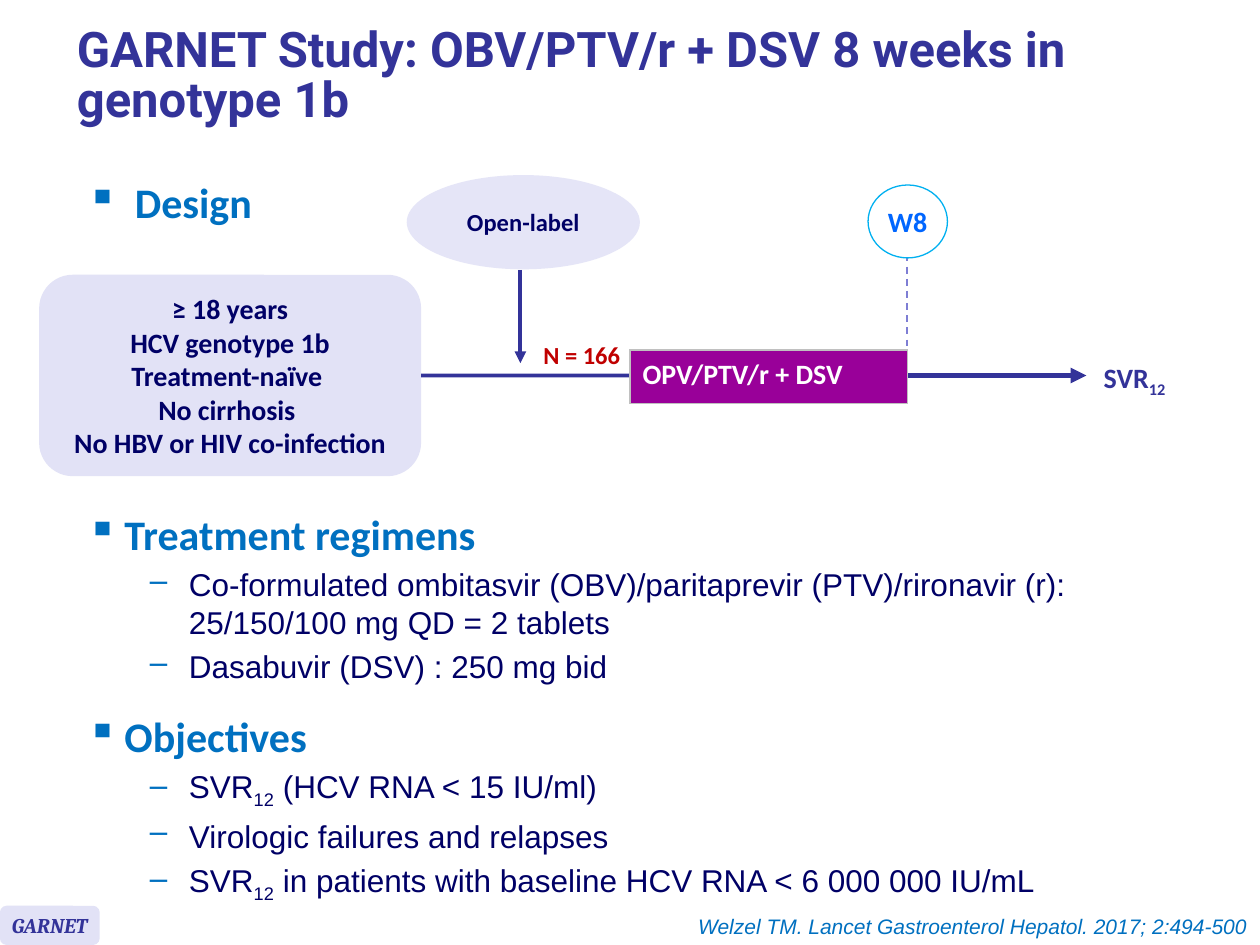
from lxml import etree
from pptx import Presentation
from pptx import util as u
from pptx.dml.color import RGBColor
from pptx.enum import dml, shapes, text
from pptx.oxml.ns import qn

HUES = {
    "indigo": "333399", "navy": "000066", "blue": "0070C0", "sky": "00B0F0",
    "azure": "0066FF", "red": "C00000", "purple": "990099", "mist": "E2E2F6",
    "pale": "E5E5F7", "violet": "7E7ED4", "grey": "C0C0C0", "white": "FFFFFF",
}
RGB = {name: RGBColor.from_string(code) for name, code in HUES.items()}
LEFT, CENTER, RIGHT = text.PP_ALIGN.LEFT, text.PP_ALIGN.CENTER, text.PP_ALIGN.RIGHT
MIDDLE = text.MSO_ANCHOR.MIDDLE


def write(para, words, size, hue, face="Calibri", bold=True, slant=False, align=LEFT):
    """Fill a paragraph; parts between underscores become subscripts."""
    para.alignment = align
    font = para.font
    font.size, font.name, font.bold, font.italic = u.Pt(size), face, bold, slant
    font.color.rgb = RGB[hue]
    for i, part in enumerate(words.split("_")):
        if part:
            run = para.add_run()
            run.text = part
            if i % 2:
                run.font._element.set("baseline", "-25000")


def link(x1, y1, x2, y2, hue, width, arrow=False):
    line = slide.shapes.add_connector(
        shapes.MSO_CONNECTOR.STRAIGHT, u.Cm(x1), u.Cm(y1), u.Cm(x2), u.Cm(y2))
    line.line.color.rgb = RGB[hue]
    line.line.width = u.Pt(width)
    if arrow:
        etree.SubElement(line.line._get_or_add_ln(), qn("a:tailEnd"), type="triangle")
    etree.SubElement(line._element.spPr, qn("a:effectLst"))
    return line


deck = Presentation()
deck.slide_width, deck.slide_height = u.Cm(25.4), u.Cm(19.05)
slide = deck.slides.add_slide(deck.slide_layouts[6])

# Study flow: lines behind the shapes
AXIS = 7.57
WEEK8 = 18.29
link(10.49, 5.44, 10.49, 7.32, "indigo", 2.25, arrow=True)
visit = link(WEEK8, 5.13, WEEK8, 8.13, "violet", 1)
visit.line.dash_style = dml.MSO_LINE.DASH

# Filled shapes: kind, place, fill, outline, lines, size, hue, face, slant
KIND = shapes.MSO_SHAPE
criteria = ["≥\u00a018 years", "HCV genotype 1b", "Treatment-naïve ",
            "No cirrhosis ", "No HBV or HIV co-infection"]
nodes = [
    (KIND.OVAL, (8.2, 3.53, 4.7, 1.9), "pale", None,
     ["Open-label"], 14, "navy", "Calibri", False),
    (KIND.OVAL, (17.5, 3.73, 1.6, 1.47), "white", "sky",
     ["W8"], 16, "azure", "Calibri", False),
    (KIND.ROUNDED_RECTANGLE, (0, 18.26, 2.01, 0.79), "mist", None,
     ["GARNET"], 12, "indigo", "Cambria", True),
    (KIND.ROUNDED_RECTANGLE, (0.79, 5.54, 7.7, 4.06), "mist", None,
     criteria, 16, "navy", "Calibri", False),
]
for kind, place, fill, edge, lines, size, hue, face, slant in nodes:
    node = slide.shapes.add_shape(kind, *map(u.Cm, place))
    node.shadow.inherit = False
    node.fill.solid()
    node.fill.fore_color.rgb = RGB[fill]
    if edge:
        node.line.color.rgb = RGB[edge]
        node.line.width = u.Pt(0.75)
    else:
        node.line.fill.background()
    frame = node.text_frame
    frame.word_wrap = len(lines) > 1
    frame.vertical_anchor = MIDDLE
    for i, words in enumerate(lines):
        para = frame.add_paragraph() if i else frame.paragraphs[0]
        write(para, words, size, hue, face, slant=slant, align=CENTER)

# The last node holds the entry criteria
entry = link(8.49, AXIS, 12.7, AXIS, "indigo", 2.25)
entry.begin_connect(node, 3)
link(WEEK8, AXIS, 21.9, AXIS, "indigo", 3, arrow=True)

# Treatment arm
grid = slide.shapes.add_table(
    1, 1, u.Cm(12.7), u.Cm(7.06), u.Cm(5.59), u.Cm(1.07)).table
cell = grid.cell(0, 0)
cell.vertical_anchor = MIDDLE
cell.fill.solid()
cell.fill.fore_color.rgb = RGB["purple"]
for i, side in enumerate(("lnL", "lnR", "lnT", "lnB")):
    edge = etree.Element(qn(f"a:{side}"), w="12700")
    paint = etree.SubElement(edge, qn("a:solidFill"))
    etree.SubElement(paint, qn("a:srgbClr"), val=HUES["grey"])
    cell._tc.tcPr.insert(i, edge)
para = cell.text_frame.paragraphs[0]
para.line_spacing = 0.8
write(para, "OPV/PTV/r + DSV", 16, "white")

# Plain labels: place, words, size, hue, face, bold, slant, align, wrap
labels = [
    ((10.69, 6.73, 2.08, 0.86), "N = 166", 14, "red", "Calibri", True, False, CENTER, False),
    ((22, 7.14, 1.83, 0.94), "SVR_12_", 16, "indigo", "Calibri", True, False, LEFT, False),
    ((5.31, 18.29, 20.09, 0.76), "Welzel TM. Lancet Gastroenterol Hepatol. 2017; 2:494-500",
     12, "blue", "Arial", False, True, RIGHT, True),
    ((1.3, 0.2, 23.19, 2.72), "GARNET Study: OBV/PTV/r + DSV 8 weeks in genotype 1b",
     28, "indigo", "Roboto", True, False, LEFT, True),
]
for place, words, size, hue, face, bold, slant, align, wrap in labels:
    frame = slide.shapes.add_textbox(*map(u.Cm, place)).text_frame
    frame.word_wrap = wrap
    write(frame.paragraphs[0], words, size, hue, face, bold, slant, align)

# The last label is the title
frame.vertical_anchor = MIDDLE
frame.paragraphs[0].line_spacing = 0.85

# Bulleted sections: top, width, height, heading indent, heading, items
parts = [
    (3.43, 5.03, 1.6, 0.97, "Design", []),
    (10.13, 23.19, 2.72, 0.76, "Treatment regimens", [
        "Co-formulated ombitasvir (OBV)/paritaprevir (PTV)/rironavir (r): "
        "25/150/100 mg QD = 2 tablets",
        "Dasabuvir (DSV) : 250 mg bid"]),
    (14.2, 23.19, 3.94, 0.76, "Objectives", [
        "SVR_12_ (HCV RNA < 15 IU/ml)",
        "Virologic failures and relapses",
        "SVR_12_ in patients with baseline HCV RNA < 6 000 000 IU/mL"]),
]
for top, width, height, indent, head, items in parts:
    frame = slide.shapes.add_textbox(
        u.Cm(1.5), u.Cm(top), u.Cm(width), u.Cm(height)).text_frame
    frame.word_wrap = True
    for i, words in enumerate([head] + items):
        para = frame.add_paragraph() if i else frame.paragraphs[0]
        left, hang, mark = (2.06, 0.79, "–") if i else (indent, indent, "▪")
        prop = para._p.get_or_add_pPr()
        prop.set("marL", str(u.Cm(left)))
        prop.set("indent", str(-u.Cm(hang)))
        tint = etree.SubElement(prop, qn("a:buClr"))
        etree.SubElement(tint, qn("a:srgbClr"), val=HUES["blue"])
        etree.SubElement(prop, qn("a:buChar"), char=mark)
        if i:
            para.level = 1
            para.space_before = u.Pt(3.6)
            write(para, words, 18, "navy", "Arial", bold=False)
        else:
            write(para, words, 24, "blue")

deck.save("out.pptx")
